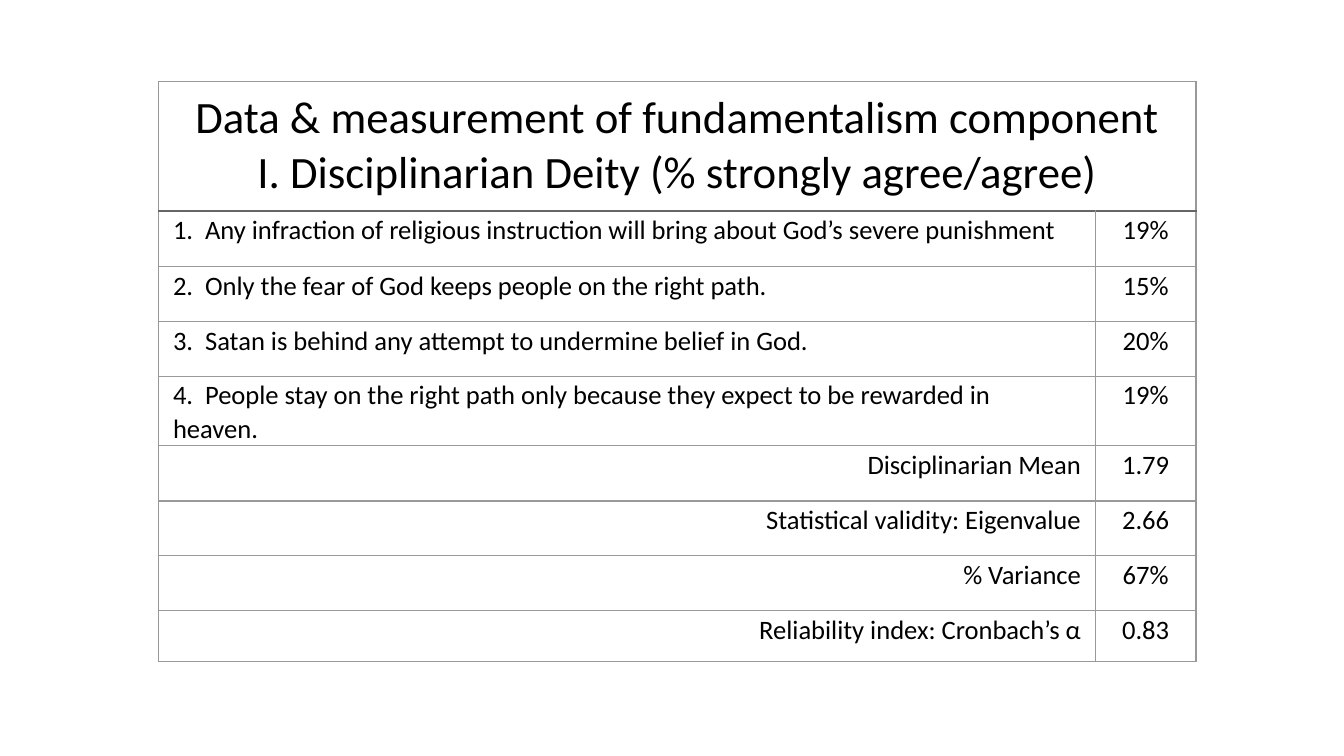
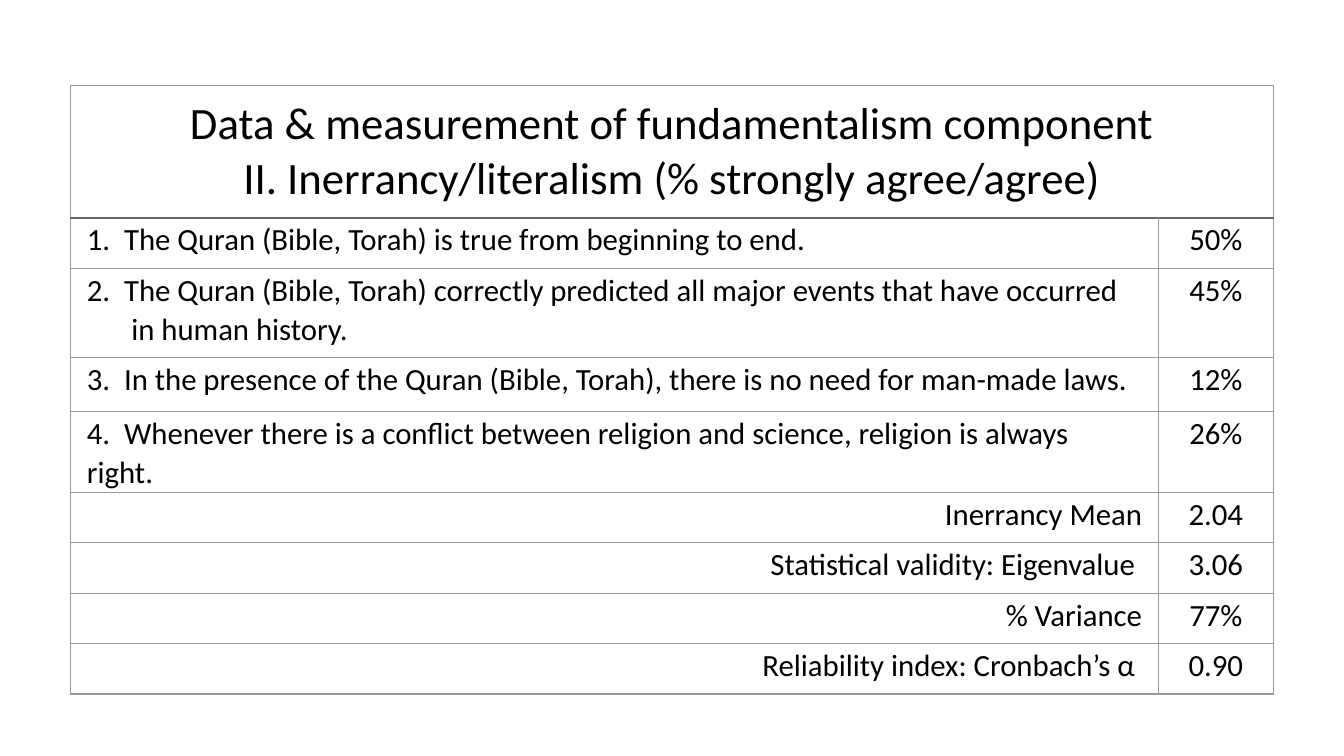
from pptx import Presentation
from pptx.dml.color import RGBColor as RGB
from pptx.enum.text import PP_ALIGN as Align
from pptx.oxml import parse_xml
from pptx.oxml.ns import nsdecls
from pptx.util import Cm, Pt

COLORS = {"text": "000000", "grid": "999999", "rule": "666666"}
FONT = "Calibri"
TITLE = "Data & measurement of fundamentalism component"


def write(p, text, size, align=Align.LEFT, spacing=None, after=0, hang=0):
    p.alignment = align
    p.space_before, p.space_after = Pt(0), Pt(after)
    if spacing:
        p.line_spacing = spacing
    if hang:
        pPr = p._p.get_or_add_pPr()
        pPr.set("marL", str(Cm(hang)))
        pPr.set("indent", str(-Cm(hang)))
    r = p.add_run()
    r.text = text
    r.font.name, r.font.size = FONT, Pt(size)
    r.font.color.rgb = RGB.from_string(COLORS["text"])


class Deck:
    """Hold the shared table style and the current slide."""

    def __init__(self):
        self.prs = Presentation()
        self.prs.slide_width, self.prs.slide_height = Cm(33.87), Cm(19.05)

    def add_slide(self):
        self.s = self.prs.slides.add_slide(self.prs.slide_layouts[6])

    def style_cell(self, cell, inset_x, inset_y, top="grid", bottom="grid"):
        cell.margin_left = cell.margin_right = Cm(inset_x)
        cell.margin_top, cell.margin_bottom = map(Cm, inset_y)
        cell.fill.background()
        tcPr = cell._tc.get_or_add_tcPr()
        sides = {"lnL": "grid", "lnR": "grid", "lnT": top, "lnB": bottom}
        for i, (side, color) in enumerate(sides.items()):
            width = Pt(1.5 if color == "rule" else 1)
            tcPr.insert(i, parse_xml(
                f'<a:{side} {nsdecls("a")} w="{width}"><a:solidFill>'
                f'<a:srgbClr val="{COLORS[color]}"/></a:solidFill></a:{side}>'))

    def add_heading(self, table, subtitle, inset):
        for cell in table.rows[0].cells:
            self.style_cell(cell, inset[0], (inset[1], inset[1]), bottom="rule")
        head = table.cell(0, 0)
        head.merge(table.cell(0, 1))
        tf = head.text_frame
        write(tf.paragraphs[0], TITLE, 32, Align.CENTER)
        write(tf.add_paragraph(), subtitle, 32, Align.CENTER)

    def add_results(self, subtitle, items, stats, origin, widths, heights,
                    size, head_inset, inset, hangs=()):
        rows = items + stats
        table = self.s.shapes.add_table(
            len(rows) + 1, 2, *map(Cm, origin),
            Cm(sum(widths)), Cm(sum(heights))).table
        table.first_row = table.horz_banding = False
        for col, width in zip(table.columns, widths):
            col.width = Cm(width)
        for row, height in zip(table.rows, heights):
            row.height = Cm(height)
        self.add_heading(table, subtitle, head_inset)
        for i, (label, value) in enumerate(rows, 1):
            for cell in table.rows[i].cells:
                self.style_cell(cell, inset, (0.05, 0),
                                top="rule" if i == 1 else "grid")
            is_stat = i > len(items)
            write(table.cell(i, 0).text_frame.paragraphs[0], label, size,
                  Align.RIGHT if is_stat else Align.LEFT, 1.05,
                  10 if is_stat else 0, 1.12 if i in hangs else 0)
            write(table.cell(i, 1).text_frame.paragraphs[0], value, size,
                  Align.CENTER, 1.05, 10)


def main():
    deck = Deck()
    deck.add_slide()
    deck.add_results(
        "I. Disciplinarian Deity (% strongly agree/agree)",
        [("1.  Any infraction of religious instruction will bring about God’s severe punishment", "19%"),
         ("2.  Only the fear of God keeps people on the right path.", "15%"),
         ("3.  Satan is behind any attempt to undermine belief in God.", "20%"),
         ("4.  People stay on the right path only because they expect to be rewarded in heaven.", "19%")],
        [("Disciplinarian Mean", "1.79"),
         ("Statistical validity: Eigenvalue", "2.66"),
         ("% Variance", "67%"),
         ("Reliability index: Cronbach’s α", "0.83")],
        origin=(4, 2.05), widths=(23.6, 2.54),
        heights=[3.25, 1.4, 1.39, 1.38, 1.75, 1.39, 1.38, 1.38, 1.29],
        size=19, head_inset=(0.48, 0.25), inset=0.36)
    deck.add_slide()
    deck.add_results(
        "II. Inerrancy/literalism (% strongly agree/agree)",
        [("1.  The Quran (Bible, Torah) is true from beginning to end.", "50%"),
         ("2.  The Quran (Bible, Torah) correctly predicted all major events that have occurred in human history.", "45%"),
         ("3.  In the presence of the Quran (Bible, Torah), there is no need for man-made laws.", "12%"),
         ("4.  Whenever there is a conflict between religion and science, religion is always right.", "26%")],
        [("Inerrancy Mean", "2.04"),
         ("Statistical validity: Eigenvalue ", "3.06"),
         ("% Variance", "77%"),
         ("Reliability index: Cronbach’s α ", "0.90")],
        origin=(1.78, 2.16), widths=(27.41, 2.9),
        heights=[3.33, 1.27, 2.24, 1.36, 2.05] + [1.27] * 4,
        size=22, head_inset=(0.56, 0.28), inset=0.41, hangs=(2,))
    deck.prs.save("out.pptx")


if __name__ == "__main__":
    main()
